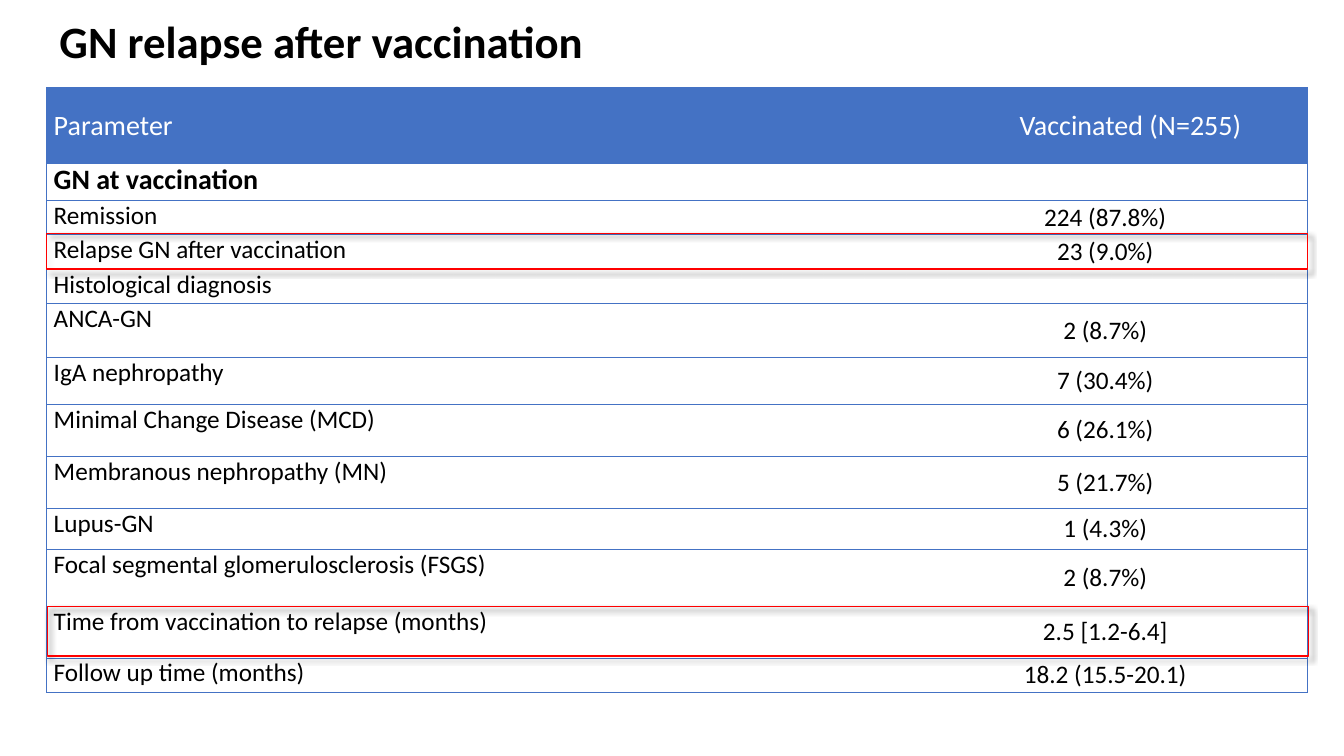
"""Build the slide on GN relapse after vaccination."""
from lxml import etree
from pptx import Presentation
from pptx.dml.color import RGBColor
from pptx.enum import shapes, text
from pptx.oxml import ns
from pptx.util import Pt

COLOURS = {"accent": "4472C4", "alert": "FF0000", "ink": "000000", "paper": "FFFFFF"}
LEFT, TOP, WIDTH = 33.1, 62.6, 900.7
COLUMNS = [612, 288.7]
ROWS = [
    ("Parameter", "Vaccinated (N=255)", 54),
    ("GN at vaccination", "", 26.6),
    ("Remission", "224 (87.8%)", 24.5),
    ("Relapse GN after vaccination", "23 (9.0%)", 24.5),
    ("Histological diagnosis", "", 24.5),
    ("ANCA-GN", "2 (8.7%)", 38.9),
    ("IgA nephropathy", "7 (30.4%)", 33.1),
    ("Minimal Change Disease (MCD)", "6 (26.1%)", 37.4),
    ("Membranous nephropathy (ΜN)", "5 (21.7%)", 37.4),
    ("Lupus-GN", "1 (4.3%)", 28.8),
    ("Focal segmental glomerulosclerosis (FSGS)", "2 (8.7%)", 41),
    ("Time from vaccination to relapse (months)", "2.5 [1.2-6.4]", 36.7),
    ("Follow up time (months)", "18.2 (15.5-20.1)", 24.5),
]
HIGHLIGHTS = [(LEFT, 167, 25.2), (33.8, 433.4, 35.3)]


def style_font(font, size, colour, bold):
    for name, value in {"name": "Calibri", "size": Pt(size), "bold": bold}.items():
        setattr(font, name, value)
    font.color.rgb = RGBColor.from_string(COLOURS[colour])


def add_node(parent, tag, **attributes):
    return etree.SubElement(parent, ns.qn(tag), attributes)


deck = Presentation()
deck.slide_width, deck.slide_height = Pt(960), Pt(540)
page = deck.slides.add_slide(deck.slide_layouts[5])

title = page.shapes.title
for name, value in {"left": 35.3, "top": 0, "width": 841, "height": 62.6}.items():
    setattr(title, name, Pt(value))
title.text_frame.text = "GN relapse after vaccination"
title.text_frame.vertical_anchor = text.MSO_ANCHOR.MIDDLE
para = title.text_frame.paragraphs[0]
para.alignment = text.PP_ALIGN.LEFT
para.line_spacing = 0.9
style_font(para.runs[0].font, 32, "ink", True)

height = sum(row[2] for row in ROWS)
frame = page.shapes.add_table(
    len(ROWS), len(COLUMNS), Pt(LEFT), Pt(TOP), Pt(WIDTH), Pt(height))
table = frame.table
table.horz_banding = False
for column, width in zip(table.columns, COLUMNS):
    column.width = Pt(width)

cell_format = {"margin_left": Pt(5.3), "margin_right": Pt(5.3),
               "margin_top": 0, "margin_bottom": 0}
for row_index, (*labels, row_height) in enumerate(ROWS):
    table.rows[row_index].height = Pt(row_height)
    is_header = row_index == 0
    for column_index, label in enumerate(labels):
        cell = table.cell(row_index, column_index)
        is_value = column_index == 1
        for name, value in cell_format.items():
            setattr(cell, name, value)
        cell.vertical_anchor = (
            text.MSO_ANCHOR.MIDDLE if is_header or is_value else text.MSO_ANCHOR.TOP)
        cell.text = label
        para = cell.text_frame.paragraphs[0]
        para.alignment = text.PP_ALIGN.CENTER if is_value else text.PP_ALIGN.LEFT
        if is_header and is_value:
            para._p.get_or_add_pPr().set("marL", str(Pt(36)))
        for font in [para.font, *(span.font for span in para.runs)]:
            style_font(font, 20 if row_index < 2 else 18,
                       "paper" if is_header else "ink", row_index == 1)

        properties = cell._tc.get_or_add_tcPr()
        inner_side = "L" if is_value else "R"
        for side in "LRTB":
            border = add_node(properties, f"a:ln{side}", w=str(Pt(0.5)))
            if side == inner_side:
                add_node(border, "a:noFill")
            else:
                border_fill = add_node(border, "a:solidFill")
                add_node(border_fill, "a:srgbClr", val=COLOURS["accent"])
        if is_header:
            cell.fill.solid()
            cell.fill.fore_color.rgb = RGBColor.from_string(COLOURS["accent"])
        else:
            cell.fill.background()

for left, top, height in HIGHLIGHTS:
    box = page.shapes.add_shape(
        shapes.MSO_SHAPE.RECTANGLE, Pt(left), Pt(top), Pt(WIDTH), Pt(height))
    box.fill.background()
    box.line.color.rgb = RGBColor.from_string(COLOURS["alert"])
    box.line.width = Pt(1)
    box.shadow.inherit = False
    effects = box._element.spPr.find(ns.qn("a:effectLst"))
    shadow = add_node(effects, "a:outerShdw", blurRad=str(Pt(4)), dist=str(Pt(3)),
                      dir="2700000", algn="tl", rotWithShape="0")
    shade = add_node(shadow, "a:srgbClr", val=COLOURS["ink"])
    add_node(shade, "a:alpha", val="40000")

deck.save("out.pptx")
